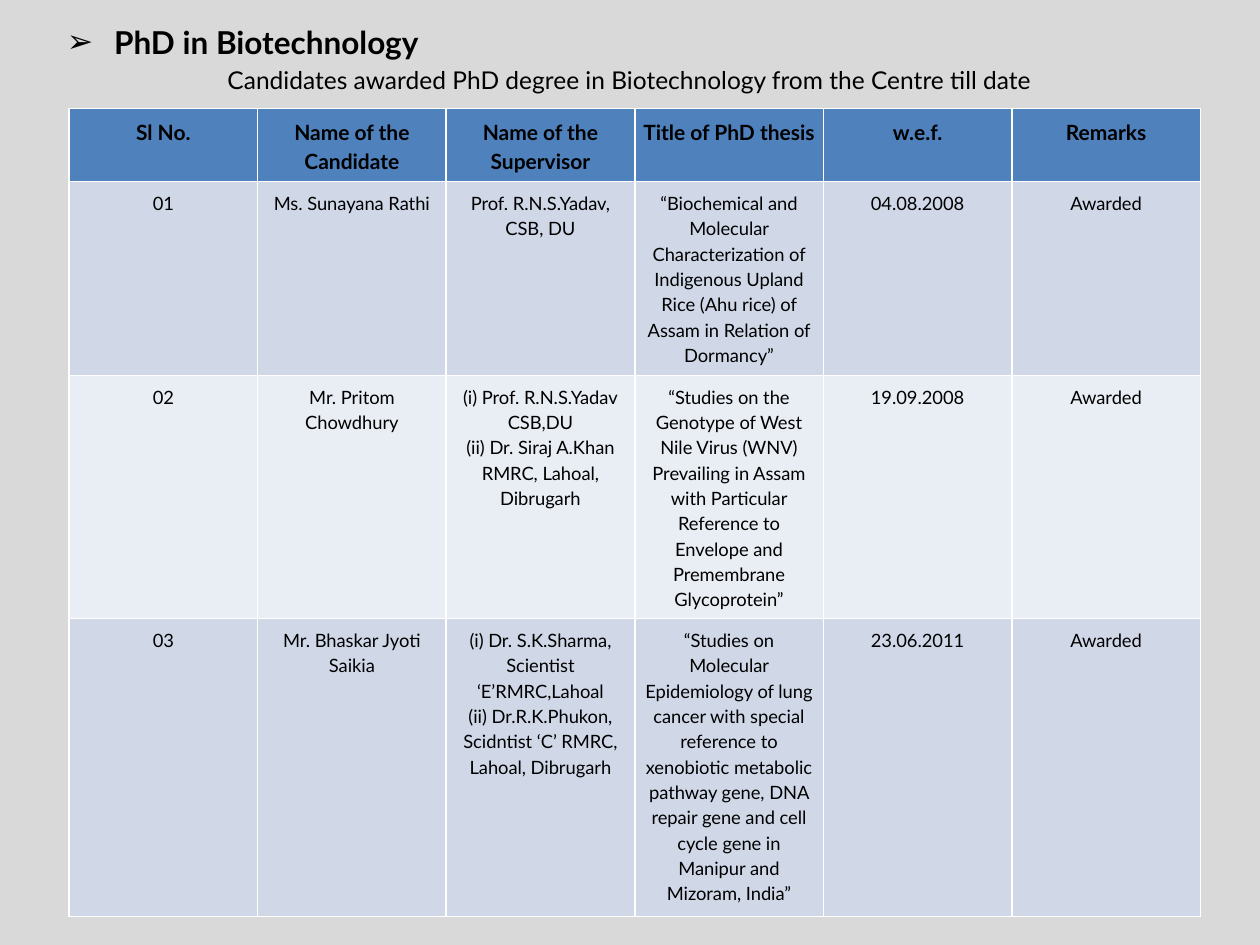
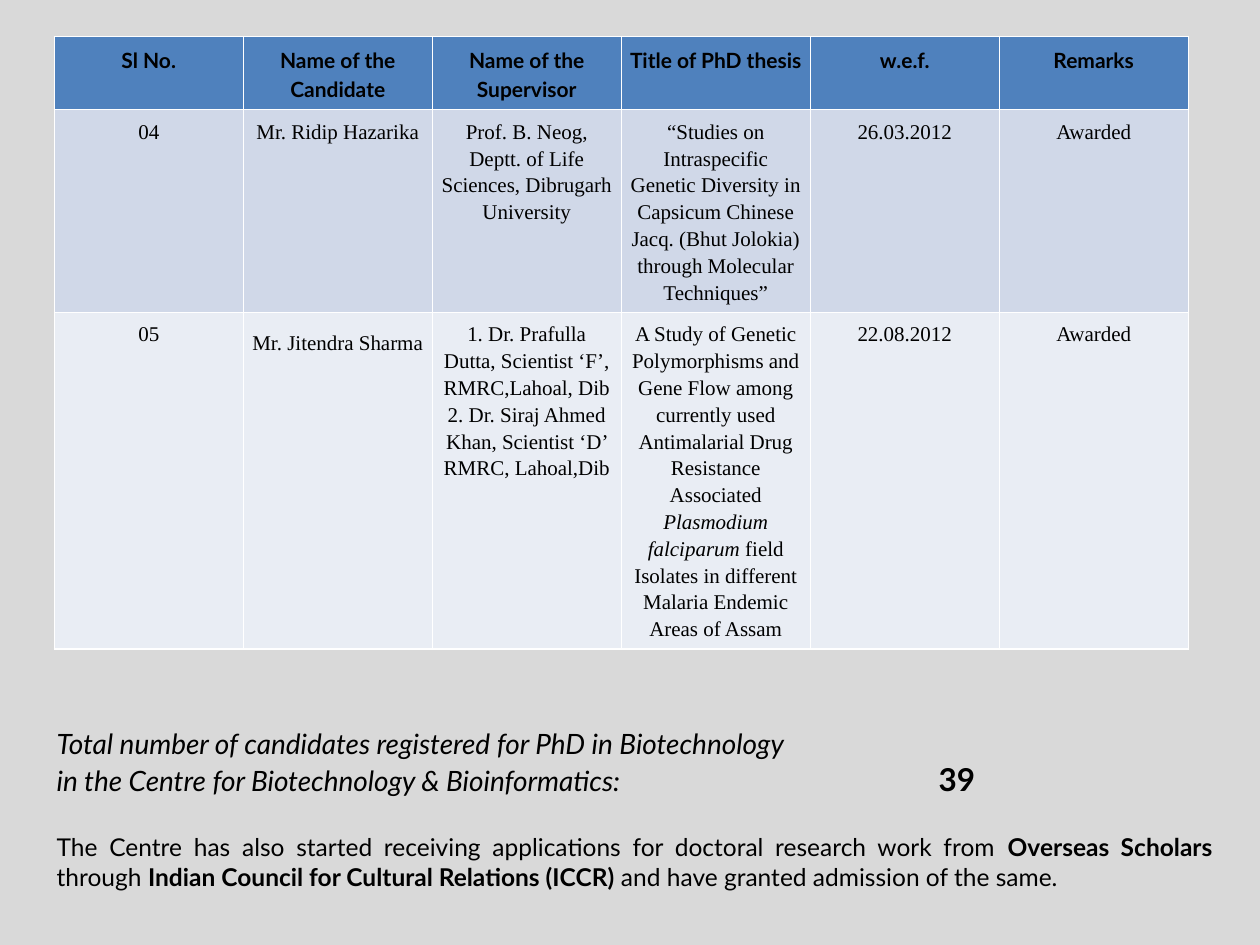
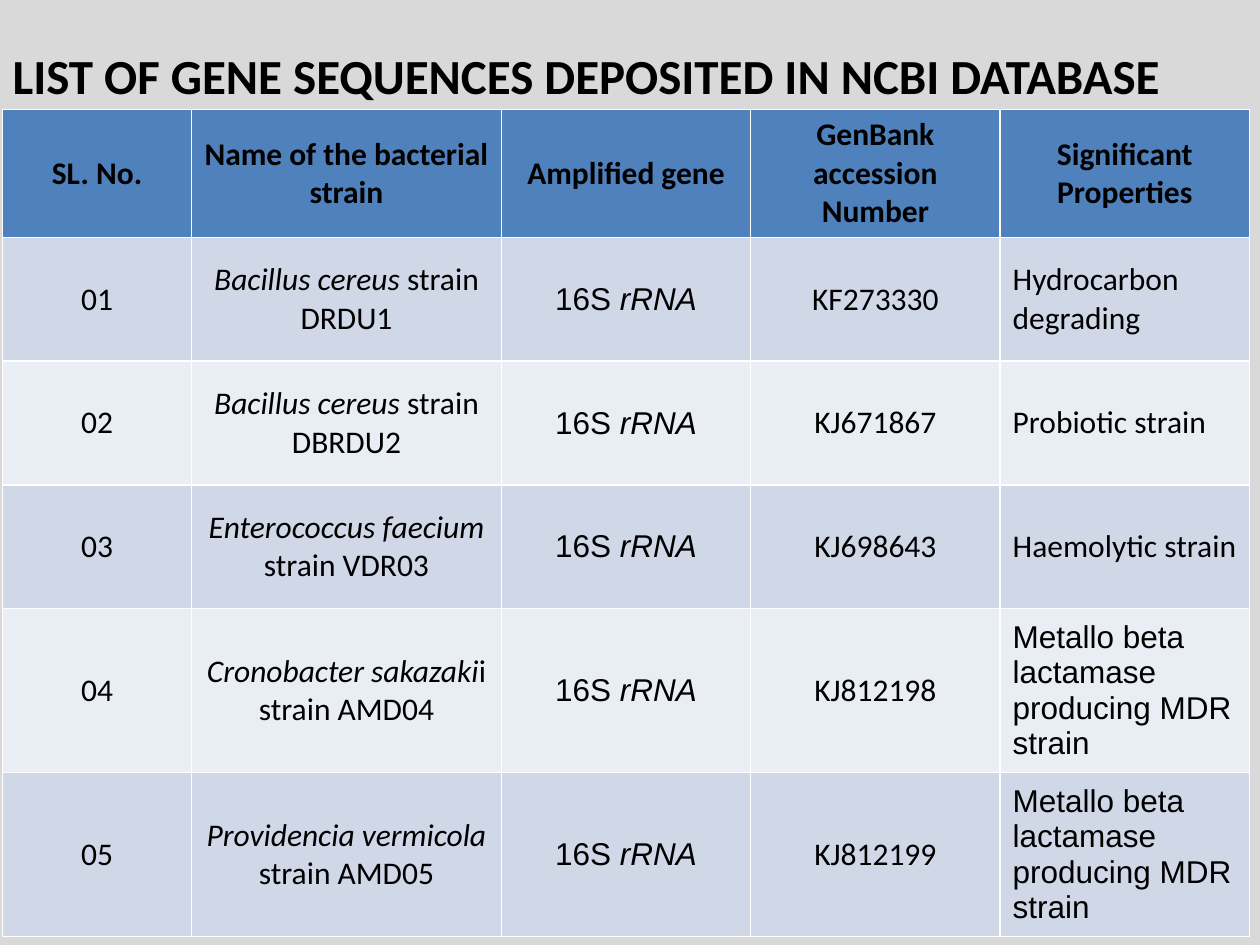
from dataclasses import dataclass
from lxml.etree import SubElement
from pptx import Presentation
from pptx.dml.color import RGBColor as Rgb
from pptx.enum.text import MSO_ANCHOR as Anchor, MSO_AUTO_SIZE as Fit, PP_ALIGN as Align
from pptx.oxml.ns import qn
from pptx.util import Pt


# Theme
@dataclass(frozen=True)
class Theme:
    page = Rgb(0xD9, 0xD9, 0xD9)
    ink = Rgb(0, 0, 0)
    head = Rgb(0x4F, 0x81, 0xBD)
    bands = (Rgb(0xD0, 0xD8, 0xE8), Rgb(0xE9, 0xED, 0xF4))
    lato, serif, sans, plain = "Lato", "Times New Roman", "Calibri", "Arial"
    title, lead, large, note, label, small = 28, 18, 16, 14, 12, 10.5


T = Theme()

# Content: _italic_, *bold*, a line break starts a paragraph
HEADING = "PhD in Biotechnology"
CAPTION = "Candidates awarded PhD degree in Biotechnology from the Centre till date"
PHD_HEAD = ("Sl No.", "Name of the Candidate", "Name of the Supervisor",
            "Title of PhD thesis", "w.e.f.", "Remarks")
EARLY = [
    ("01", "Ms. Sunayana Rathi", "Prof. R.N.S.Yadav, CSB, DU",
     "“Biochemical and Molecular Characterization of Indigenous Upland Rice "
     "(Ahu rice) of Assam in Relation of Dormancy”", "04.08.2008", "Awarded"),
    ("02", "Mr. Pritom Chowdhury",
     "(i) Prof. R.N.S.Yadav\nCSB,DU\n(ii) Dr. Siraj A.Khan RMRC, Lahoal, Dibrugarh",
     "“Studies on the Genotype of West Nile Virus (WNV) Prevailing in Assam with "
     "Particular Reference to Envelope and Premembrane Glycoprotein”",
     "19.09.2008", "Awarded"),
    ("03", "Mr. Bhaskar Jyoti Saikia",
     "(i) Dr. S.K.Sharma, Scientist ‘E’RMRC,Lahoal\n"
     "(ii) Dr.R.K.Phukon, Scidntist ‘C’ RMRC, Lahoal, Dibrugarh",
     "“Studies on Molecular Epidemiology of lung cancer with special reference to "
     "xenobiotic metabolic pathway gene, DNA repair gene and cell cycle gene in "
     "Manipur and Mizoram, India”", "23.06.2011", "Awarded"),
]
LATE = [
    ("04", "Mr. Ridip Hazarika",
     "Prof. B. Neog, Deptt. of Life Sciences, Dibrugarh University",
     "“Studies on Intraspecific Genetic Diversity in Capsicum Chinese Jacq. "
     "(Bhut Jolokia) through Molecular Techniques”", "26.03.2012", "Awarded"),
    ("05", "Mr. Jitendra Sharma",
     "1. Dr. Prafulla Dutta, Scientist ‘F’, RMRC,Lahoal, Dib\n"
     "2. Dr. Siraj Ahmed Khan, Scientist ‘D’ RMRC, Lahoal,Dib",
     "A Study of Genetic Polymorphisms and Gene Flow among currently used "
     "Antimalarial Drug Resistance Associated _Plasmodium falciparum_ field "
     "Isolates in different Malaria Endemic Areas of Assam", "22.08.2012", "Awarded"),
]
TOTAL = ("Total number of candidates registered for PhD in Biotechnology",
         "in the Centre for Biotechnology & Bioinformatics:\t*39*")
ABROAD = ("The Centre has also started receiving applications for doctoral research "
          "work from *Overseas Scholars *through *Indian Council for Cultural "
          "Relations (ICCR) *and have granted admission of the same.")
GENE_TITLE = "LIST OF GENE SEQUENCES DEPOSITED IN NCBI DATABASE"
GENE_HEAD = ("SL. No.", "Name of the bacterial strain", "Amplified gene",
             "GenBank accession Number", "Significant Properties")
RRNA = "16S _rRNA_"
MDR = "Metallo beta lactamase producing MDR strain"
GENES = [
    ("01", "_Bacillus cereus_ strain DRDU1", RRNA, "KF273330", "Hydrocarbon degrading"),
    ("02", "_Bacillus cereus_ strain DBRDU2", RRNA, "KJ671867", "Probiotic strain"),
    ("03", "_Enterococcus faecium_ strain VDR03", RRNA, "KJ698643", "Haemolytic strain"),
    ("04", "_Cronobacter sakazaki_i strain AMD04", RRNA, "KJ812198", MDR),
    ("05", "_Providencia vermicola_ strain AMD05", RRNA, "KJ812199", MDR),
]


# Helpers
def put(para, text, face, size, bold=False, italic=False, align=Align.LEFT):
    for i, part in enumerate(text.split("_")):
        for j, bit in enumerate(part.split("*")):
            if bit:
                run = para.add_run()
                run.text = bit
                if i % 2:
                    run.font.italic = True
                if j % 2:
                    run.font.bold = True
    para.alignment = align
    font = para.font
    font.name, font.size, font.bold, font.italic = face, Pt(size), bold, italic
    font.color.rgb = T.ink


def place(shape, left, top, width, height):
    shape.left, shape.top, shape.width, shape.height = map(Pt, (left, top, width, height))


def lines(frame, count):
    return [frame.paragraphs[0]] + [frame.add_paragraph() for _ in range(count - 1)]


def grid(slide, left, top, rows, widths, heights, style, pad):
    """Add a banded table; style(row, col) gives the text settings of a cell."""
    shape = slide.shapes.add_table(len(rows), len(widths), Pt(left), Pt(top),
                                   Pt(sum(widths)), Pt(sum(heights)))
    table = shape.table
    for col, width in zip(table.columns, widths):
        col.width = Pt(width)
    for r, (texts, height) in enumerate(zip(rows, heights)):
        table.rows[r].height = Pt(height)
        for c, text in enumerate(texts):
            cell = table.cell(r, c)
            cell.fill.solid()
            cell.fill.fore_color.rgb = T.bands[(r - 1) % 2] if r else T.head
            cell.margin_left = cell.margin_right = Pt(pad[0])
            cell.margin_top = cell.margin_bottom = Pt(pad[1])
            look = {"bold": r == 0, "align": Align.CENTER, **style(r, c)}
            space = look.pop("space", None)
            cell.vertical_anchor = look.pop("anchor", Anchor.TOP)
            parts = text.split("\n")
            for para, part in zip(lines(cell.text_frame, len(parts)), parts):
                if space:
                    para.line_spacing = space
                put(para, part, **look)


def phd(slide, left, top, rows, width, heights, face, size, loose=()):
    def style(r, c):
        return {"face": face if r else T.lato, "size": size if r else T.label,
                "space": 1.5 if (r, c) in loose else 1.15}

    count = len(PHD_HEAD)
    grid(slide, left, top, [PHD_HEAD] + rows, [width / count] * count, heights,
         style, (4.32, 4.32))


# Slides
def first(deck):
    slide = deck.slides.add_slide(deck.slide_layouts[1])
    title = slide.shapes.title
    title.element.getparent().remove(title.element)
    body = slide.placeholders[1]
    place(body, 31, 9.4, 657.5, 504.7)
    body.text_frame.auto_size = Fit.NONE
    lead, note = lines(body.text_frame, 2)
    for para, indent, mark in ((lead, 27, "➢"), (note, 0, None)):
        props = para._p.get_or_add_pPr()
        props.set("marL", str(Pt(indent)))
        props.set("indent", str(Pt(-indent)))
        if mark:
            SubElement(props, qn("a:buChar")).set("char", mark)
        else:
            SubElement(props, qn("a:buNone"))
    lead.space_before, note.space_before = Pt(0), Pt(2.8)
    put(lead, HEADING, T.lato, T.lead, bold=True)
    put(note, CAPTION, T.lato, T.note, align=Align.CENTER)
    phd(slide, 39.5, 62, EARLY, 646.5, (41, 110.7, 138.2, 170.4), T.lato, T.small)


def second(deck):
    slide = deck.slides.add_slide(deck.slide_layouts[6])
    phd(slide, 31, 20.9, LATE, 648, (41, 114.8, 192), T.serif, T.label, loose={(2, 1)})
    box = slide.shapes.add_textbox(Pt(25.3), Pt(411.8), Pt(674.7), Pt(123.8))
    box.text_frame.word_wrap = True
    count, total, abroad = lines(box.text_frame, 3)
    tabs = SubElement(total._p.get_or_add_pPr(), qn("a:tabLst"))
    stop = SubElement(tabs, qn("a:tab"))
    stop.set("pos", str(Pt(504)))
    stop.set("algn", "l")
    for para, text in zip((count, total), TOTAL):
        put(para, text, T.lato, T.large, italic=True)
    figure = total.runs[-1].font
    figure.size, figure.italic = Pt(T.lead), False
    abroad.space_before = Pt(19.5)
    put(abroad, ABROAD, T.lato, T.note, align=Align.JUSTIFY)


def third(deck):
    slide = deck.slides.add_slide(deck.slide_layouts[5])
    title = slide.shapes.title
    place(title, 0, 22.5, 720, 41)
    title.text_frame.auto_size = Fit.NONE
    put(title.text_frame.paragraphs[0], GENE_TITLE, T.sans, T.title, bold=True)

    def style(r, c):
        plain = r and (c == 2 or GENES[r - 1][c] == MDR)
        return {"face": T.plain if plain else T.sans, "size": T.lead,
                "anchor": Anchor.MIDDLE,
                "align": Align.LEFT if r and c == 4 else Align.CENTER}

    grid(slide, 1.5, 62.6, [GENE_HEAD] + GENES, [108, 177] + [142.5] * 3,
         [72] + [70.7] * 3 + [93.7] * 2, style, (7.2, 3.6))


def main():
    deck = Presentation()
    deck.slide_width, deck.slide_height = Pt(720), Pt(540)
    fill = deck.slide_master.background.fill
    fill.solid()
    fill.fore_color.rgb = T.page
    for build in (first, second, third):
        build(deck)
    deck.save("out.pptx")


if __name__ == "__main__":
    main()
